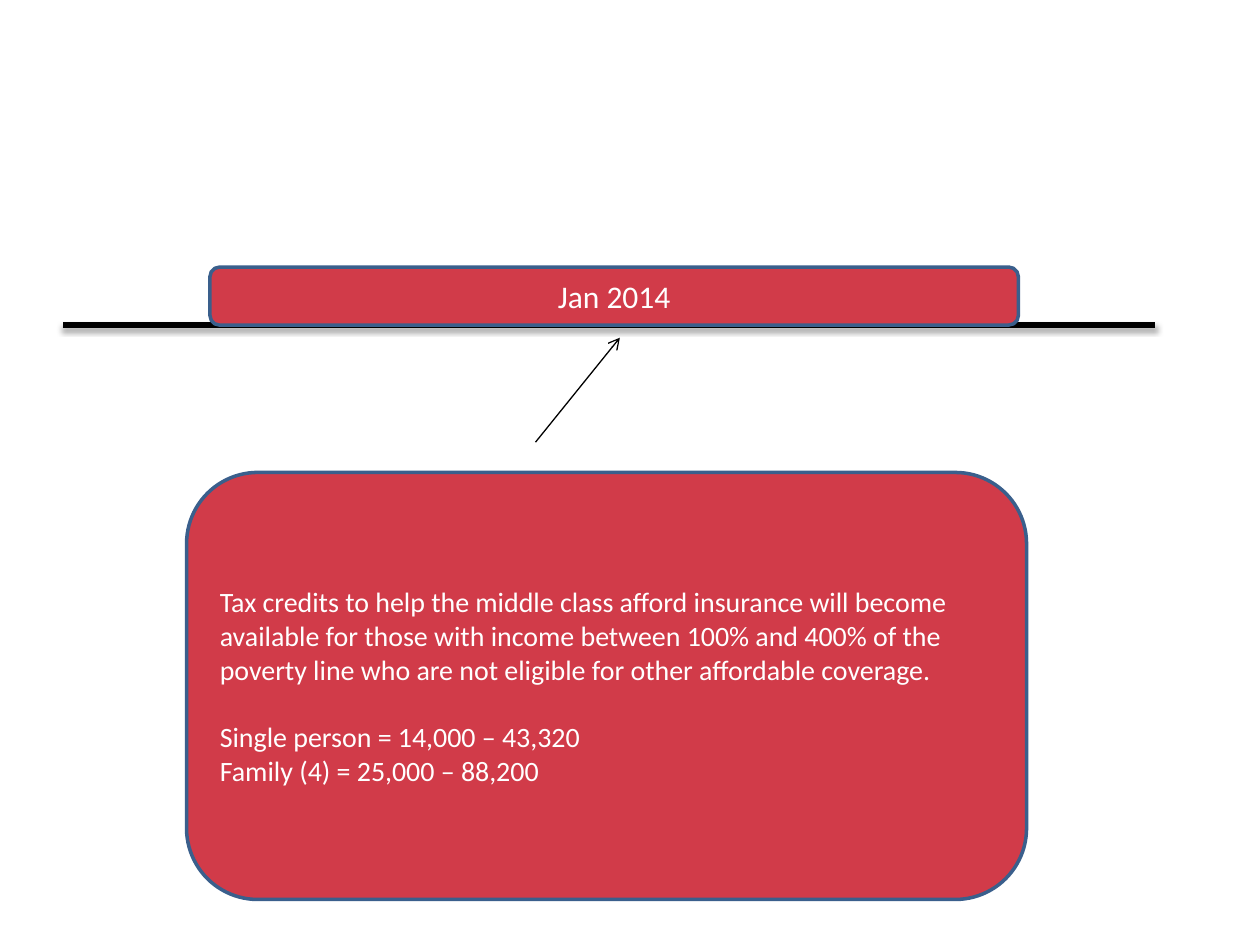
from lxml.etree import SubElement
from pptx import Presentation
from pptx.dml.color import RGBColor
from pptx.enum.shapes import MSO_CONNECTOR as Connector, MSO_SHAPE as Shape
from pptx.enum.text import MSO_ANCHOR as Anchor, PP_ALIGN as Align
from pptx.oxml.ns import qn
from pptx.util import Pt

FONT = "Calibri"
RED, BLUE, WHITE, BLACK = "D13B49", "3A5F8C", "FFFFFF", "000000"

DATE = ["Jan 2014"]
DETAILS = [
    "Tax credits to help the middle class afford insurance will become available "
    "for those with income between 100% and 400% of the poverty line who are not "
    "eligible for other affordable coverage.",
    "Single person = 14,000 – 43,320",
    "Family (4) = 25,000 – 88,200",
]
INCOME_GAP = 19.5

TIMELINE = (36, 185.8, 660, 185.8)
POINTER = (306, 252.7, 354.2, 193)
DETAILS_BOX = (106.6, 270, 480, 244)
DATE_BOX = (120, 152.6, 462, 33.2)


def color(value):
    return RGBColor.from_string(value)


def add_line(slide, ends, width):
    line = slide.shapes.add_connector(Connector.STRAIGHT, *map(Pt, ends))
    line.line.color.rgb = color(BLACK)
    line.line.width = Pt(width)
    effects = SubElement(line._element.spPr, qn("a:effectLst"))
    return line, effects


def add_shadow(effects):
    shadow = SubElement(effects, qn("a:outerShdw"), blurRad=str(Pt(3.1)),
                        dist=str(Pt(1.8)), dir="5400000", rotWithShape="0")
    tint = SubElement(shadow, qn("a:srgbClr"), val=BLACK)
    SubElement(tint, qn("a:alpha"), val="35000")


def add_box(slide, area, lines, size, align):
    box = slide.shapes.add_shape(Shape.ROUNDED_RECTANGLE, *map(Pt, area))
    box.shadow.inherit = False
    box.fill.solid()
    box.fill.fore_color.rgb = color(RED)
    box.line.color.rgb = color(BLUE)
    box.line.width = Pt(2)
    frame = box.text_frame
    frame.word_wrap = True
    frame.vertical_anchor = Anchor.MIDDLE
    frame.text = "\n".join(lines)
    for paragraph in frame.paragraphs:
        paragraph.alignment = align
        for run in paragraph.runs:
            run.font.name = FONT
            run.font.size = Pt(size)
            run.font.color.rgb = color(WHITE)
    return frame


def main():
    deck = Presentation()
    deck.slide_width, deck.slide_height = Pt(720), Pt(540)
    slide = deck.slides.add_slide(deck.slide_layouts[6])

    timeline, timeline_effects = add_line(slide, TIMELINE, 3)
    add_shadow(timeline_effects)
    pointer, _ = add_line(slide, POINTER, 0.75)
    SubElement(pointer.line._get_or_add_ln(), qn("a:tailEnd"), type="arrow")

    details = add_box(slide, DETAILS_BOX, DETAILS, 16, Align.LEFT)
    details.paragraphs[1].space_before = Pt(INCOME_GAP)
    add_box(slide, DATE_BOX, DATE, 18, Align.CENTER)

    deck.save("out.pptx")


if __name__ == "__main__":
    main()
